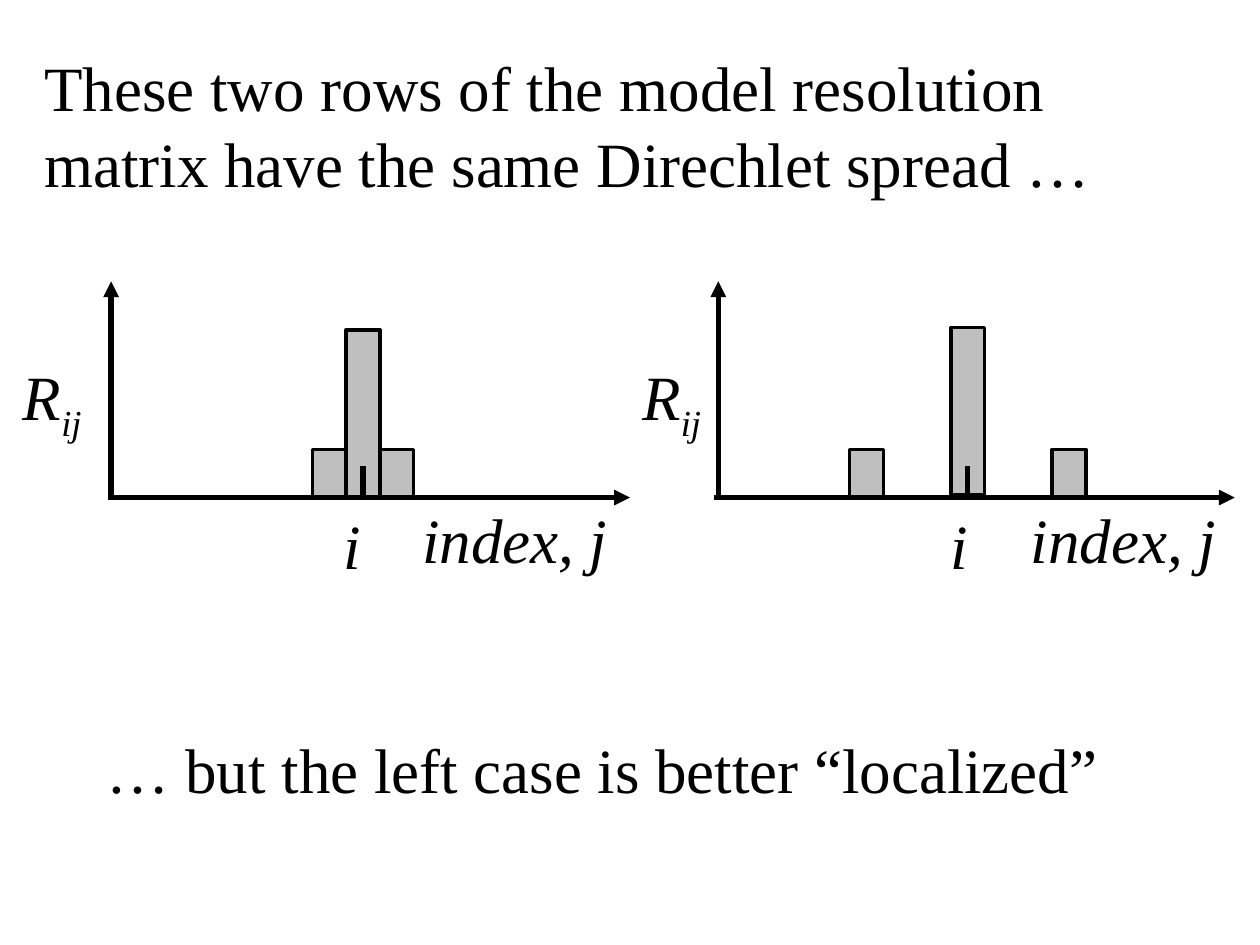
from lxml import etree
from pptx import Presentation
from pptx.dml.color import RGBColor
from pptx.enum.shapes import MSO_CONNECTOR as CONN, MSO_SHAPE as SHAPE
from pptx.enum.text import MSO_ANCHOR as ANCHOR, MSO_AUTO_SIZE as FIT, PP_ALIGN as ALIGN
from pptx.oxml.ns import qn
from pptx.util import Cm, Pt

BLACK = RGBColor(0x00, 0x00, 0x00)
GRAY = RGBColor(0xBF, 0xBF, 0xBF)

# Shared plot measures, in cm
BASE = 10.03
BAR_W = 0.68
PEAK_H, SIDE_H = 3.38, 0.97
AXIS_TOP, AXIS_BOTTOM = 5.67, 10.08
TICK_TOP = 9.4
LABEL_H = 1.8

PLOTS = [
    dict(center=7.32, gap=1, lift=0, y_axis=2.24, x_axis=(2.2, 12.7),
         r_left=0.21, i_left=6.67, index=(8.26, 5.4)),
    dict(center=19.51, gap=3, lift=0.05, y_axis=14.48, x_axis=(14.4, 24.89),
         r_left=12.7, i_left=18.92, index=(20.53, 4.87)),
]


class Drawer:
    font = dict(name="Times New Roman", size=Pt(36))

    def __init__(self, slide):
        self.slide = slide

    def fill_text(self, tf, runs, italic=False):
        """Fill a frame with (text, baseline percent) runs."""
        tf.word_wrap = True
        p = tf.paragraphs[0]
        p.alignment = ALIGN.LEFT
        for text, baseline in runs:
            r = p.add_run()
            r.text = text
            for key, value in dict(self.font, italic=italic).items():
                setattr(r.font, key, value)
            r.font.color.rgb = BLACK
            if baseline:
                r._r.get_or_add_rPr().set("baseline", str(baseline * 1000))

    def title(self, x, y, w, h, text):
        s = self.slide.shapes.title
        s.left, s.top, s.width, s.height = Cm(x), Cm(y), Cm(w), Cm(h)
        tf = s.text_frame
        tf.vertical_anchor = ANCHOR.TOP
        tf.auto_size = FIT.NONE
        self.fill_text(tf, [(text, 0)])

    def text(self, x, y, w, *runs, italic=False):
        s = self.slide.shapes.add_textbox(Cm(x), Cm(y), Cm(w), Cm(LABEL_H))
        s.text_frame.auto_size = FIT.SHAPE_TO_FIT_TEXT
        self.fill_text(s.text_frame, runs, italic)

    def bar(self, center, bottom, height):
        s = self.slide.shapes.add_shape(
            SHAPE.RECTANGLE, Cm(center - BAR_W / 2), Cm(bottom - height), Cm(BAR_W), Cm(height))
        s.shadow.inherit = False
        s.fill.solid()
        s.fill.fore_color.rgb = GRAY
        s.line.color.rgb = BLACK
        s.line.width = Pt(2)

    def line(self, x1, y1, x2, y2, arrow=False):
        """Draw a straight line, with an optional arrowhead at its start."""
        c = self.slide.shapes.add_connector(CONN.STRAIGHT, Cm(x1), Cm(y1), Cm(x2), Cm(y2))
        c.line.color.rgb = BLACK
        c.line.width = Pt(3)
        if arrow:
            etree.SubElement(c.line._get_or_add_ln(), qn("a:headEnd"), type="triangle")
        etree.SubElement(c._element.spPr, qn("a:effectLst"))

    def plot(self, center, gap, lift, y_axis, x_axis, r_left, i_left, index):
        self.bar(center, BASE - lift, PEAK_H)
        for side in (-1, 1):
            self.bar(center + side * gap * BAR_W, BASE, SIDE_H)
        self.line(y_axis, AXIS_TOP, y_axis, AXIS_BOTTOM, arrow=True)
        start, tip = x_axis
        self.line(tip, BASE, start, BASE, arrow=True)
        self.line(center, TICK_TOP, center, AXIS_BOTTOM)
        self.text(r_left, 7.09, 2.36, ("R", 0), ("ij", -25), italic=True)
        index_left, index_width = index
        self.text(index_left, 9.96, index_width, ("index, j", 0), italic=True)
        self.text(i_left, 10.08, 1.02, ("i", 0), italic=True)


def main():
    prs = Presentation()
    prs.slide_width, prs.slide_height = Cm(25.4), Cm(19.05)
    d = Drawer(prs.slides.add_slide(prs.slide_layouts.get_by_name("Title Only")))
    d.title(0.64, 0.85, 22.86, 3.33,
            "These two rows of the model resolution matrix have the same Direchlet spread …")
    for plot in PLOTS:
        d.plot(**plot)
    d.text(1.9, 14.6, 21.38, ("… but the left case is better “localized”", 0))
    prs.save("out.pptx")


if __name__ == "__main__":
    main()
